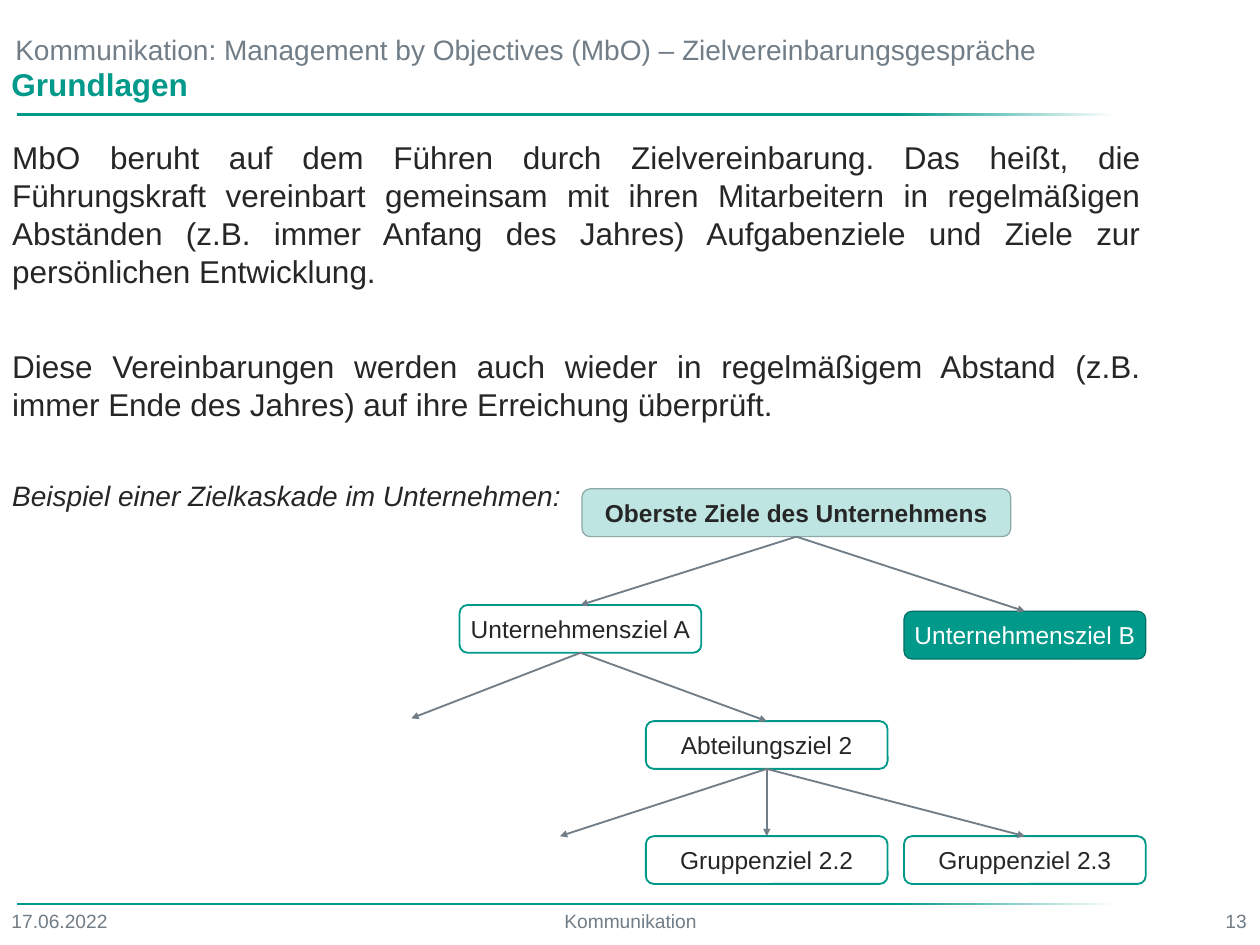
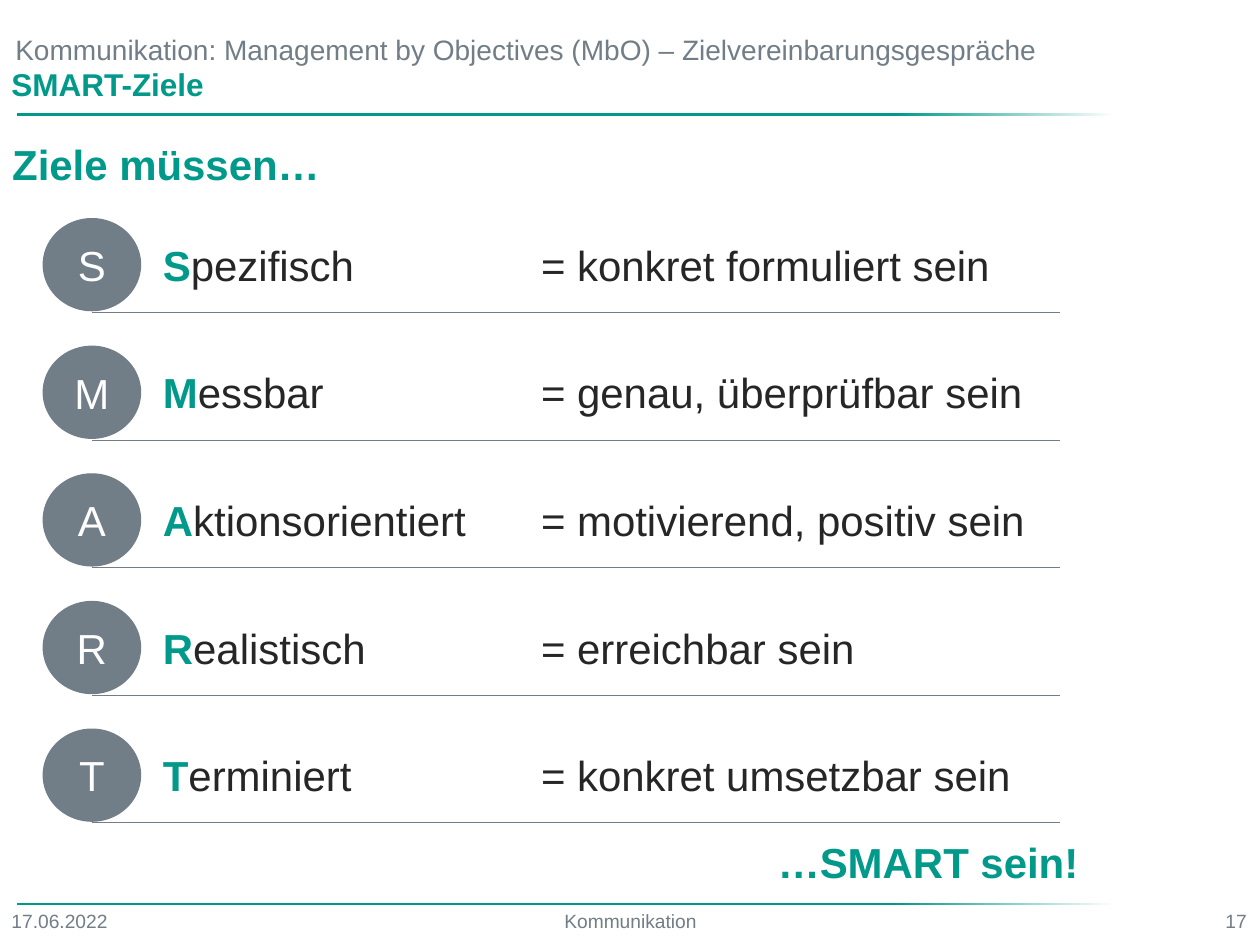
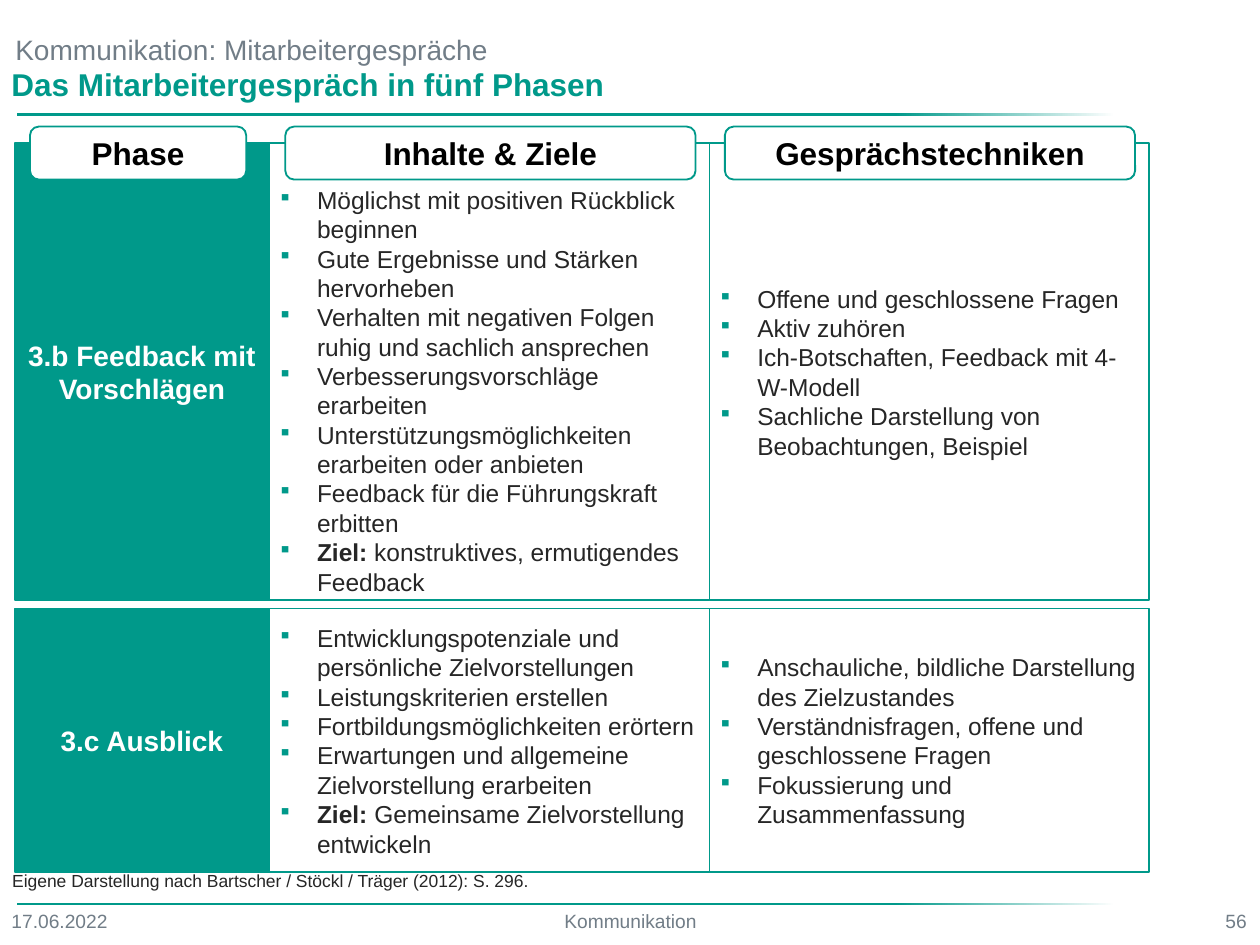
from copy import deepcopy

from lxml.etree import SubElement
from pptx import Presentation
from pptx.dml.color import RGBColor
from pptx.enum.shapes import MSO_CONNECTOR as Link, MSO_SHAPE as Preset
from pptx.enum.text import MSO_ANCHOR as Anchor, PP_ALIGN as Align
from pptx.oxml.ns import qn
from pptx.util import Cm, Pt

FONT = "Arial"
TEAL, GREY, INK, WHITE, BLACK = "00998A", "717D87", "262626", "FFFFFF", "000000"
FOOTER, SMALL, TEXT, TOPIC, HEADING, LARGE = 15.6, 14.2, 19.9, 22.8, 25.6, 34.1
INSET = (0.25, 0.13)

DATE, COURSE = "17.06.2022", "Kommunikation"
MBO = "Kommunikation: Management by Objectives (MbO) – Zielvereinbarungsgespräche"
TALKS = "Kommunikation: Mitarbeitergespräche"
BODY = (0.1, 3.84, 32.84, 21.23)

BASICS = [
    ("MbO beruht auf dem Führen durch Zielvereinbarung. Das heißt, die Führungskraft "
     "vereinbart gemeinsam mit ihren Mitarbeitern in regelmäßigen Abständen (z.B. immer "
     "Anfang des Jahres) Aufgabenziele und Ziele zur persönlichen Entwicklung.",
     HEADING, False, 47),
    ("Diese Vereinbarungen werden auch wieder in regelmäßigem Abstand (z.B. immer Ende "
     "des Jahres) auf ihre Erreichung überprüft.", HEADING, False, 45),
    ("Beispiel einer Zielkaskade im Unternehmen:", TOPIC, True, 0),
]

GOAL_STYLES = {
    "top": ("BFE5E2", "8DA9A7", 1, INK, True),
    "plain": (WHITE, TEAL, 1.5, INK, False),
    "filled": (TEAL, "007166", 1, WHITE, False),
}
GOAL_HEIGHT = 1.37
GOALS = {
    "top": ("Oberste Ziele des Unternehmens", 22.83, 14.02, 12.29, "top"),
    "a": ("Unternehmensziel A", 16.64, 17.35, 6.93, "plain"),
    "b": ("Unternehmensziel B", 29.38, 17.53, 6.93, "filled"),
    "2": ("Abteilungsziel 2", 21.98, 20.68, 6.93, "plain"),
    "2.2": ("Gruppenziel 2.2", 21.98, 23.98, 6.93, "plain"),
    "2.3": ("Gruppenziel 2.3", 29.38, 23.98, 6.93, "plain"),
}
CASCADE = [("top", "a"), ("top", "b"), ("a", "2"), ("2", "2.2"), ("2", "2.3")]
OPEN_ENDS = [("2", (16.05, 23.98)), ("a", (11.79, 20.6))]

SMART = [
    ("Spezifisch", "konkret formuliert sein"),
    ("Messbar", "genau, überprüfbar sein"),
    ("Aktionsorientiert", "motivierend, positiv sein"),
    ("Realistisch", "erreichbar sein"),
    ("Terminiert", "konkret umsetzbar sein"),
]
SMART_TOP, SMART_PITCH = 6.27, 3.66

COLUMNS = [(0.42, 7.3), (7.72, 12.62), (20.34, 12.6)]
HEADERS = [
    ("Phase", 0.86, 6.2),
    ("Inhalte & Ziele", 8.18, 11.76),
    ("Gesprächstechniken", 20.78, 11.76),
]
PHASES = [
    ("3.b Feedback mit Vorschlägen", 4.11, 13.11, Anchor.BOTTOM, [
        [("", "Möglichst mit positiven Rückblick beginnen"),
         ("", "Gute Ergebnisse und Stärken hervorheben"),
         ("", "Verhalten mit negativen Folgen ruhig und sachlich ansprechen"),
         ("", "Verbesserungsvorschläge erarbeiten"),
         ("", "Unterstützungsmöglichkeiten erarbeiten oder anbieten"),
         ("", "Feedback für die Führungskraft erbitten"),
         ("Ziel:", " konstruktives, ermutigendes Feedback")],
        [("", "Offene und geschlossene Fragen"),
         ("", "Aktiv zuhören"),
         ("", "Ich-Botschaften, Feedback mit 4-W-Modell"),
         ("", "Sachliche Darstellung von Beobachtungen, Beispiel")],
    ]),
    ("3.c Ausblick", 17.45, 7.57, Anchor.MIDDLE, [
        [("", "Entwicklungspotenziale und persönliche Zielvorstellungen"),
         ("", "Leistungskriterien erstellen"),
         ("", "Fortbildungsmöglichkeiten erörtern"),
         ("", "Erwartungen und allgemeine Zielvorstellung erarbeiten"),
         ("Ziel: ", "Gemeinsame Zielvorstellung entwickeln")],
        [("", "Anschauliche, bildliche Darstellung des Zielzustandes"),
         ("", "Verständnisfragen, offene und geschlossene Fragen"),
         ("", "Fokussierung und Zusammenfassung")],
    ]),
]
SOURCE = "Eigene Darstellung nach Bartscher / Stöckl / Träger (2012): S. 296."


def rgb(value):
    return RGBColor.from_string(value)


def lengths(values):
    return [Cm(value) for value in values]


def prepare(frame, anchor, inset=INSET):
    frame.word_wrap = True
    frame.vertical_anchor = anchor
    frame.margin_left = frame.margin_right = Cm(inset[0])
    frame.margin_top = frame.margin_bottom = Cm(inset[1])
    return frame


def add_para(frame, first, align=Align.LEFT, after=0):
    para = frame.paragraphs[0] if first else frame.add_paragraph()
    para.alignment = align
    para.space_before = Pt(0)
    para.space_after = Pt(after)
    return para


def add_span(para, text, size, color=INK, bold=False, italic=False):
    span = para.add_run()
    span.text = text
    font = span.font
    font.name, font.size, font.bold, font.italic = FONT, Pt(size), bold, italic
    font.color.rgb = rgb(color)


def add_box(page, at, anchor=Anchor.TOP, inset=INSET):
    return prepare(page.shapes.add_textbox(*lengths(at)).text_frame, anchor, inset)


def add_label(page, at, text, size, color=INK, bold=False, align=Align.LEFT,
              anchor=Anchor.TOP, inset=INSET):
    para = add_para(add_box(page, at, anchor, inset), True, align)
    add_span(para, text, size, color, bold)


def add_panel(page, preset, at, fill, line, width, anchor=Anchor.MIDDLE, inset=INSET):
    shape = page.shapes.add_shape(preset, *lengths(at))
    shape.shadow.inherit = False
    if fill:
        shape.fill.solid()
        shape.fill.fore_color.rgb = rgb(fill)
    else:
        shape.fill.background()
    shape.line.color.rgb = rgb(line)
    shape.line.width = Pt(width)
    prepare(shape.text_frame, anchor, inset)
    return shape


def add_caption(shape, text, size, color, bold=False):
    add_span(add_para(shape.text_frame, True, Align.CENTER), text, size, color, bold)


def add_line(page, start, end, width, arrow=False):
    line = page.shapes.add_connector(Link.STRAIGHT, *lengths(start + end))
    line.line.color.rgb = rgb(GREY)
    line.line.width = Pt(width)
    properties = line._element.spPr
    if arrow:
        SubElement(properties.find(qn("a:ln")), qn("a:tailEnd"), type="triangle")
    SubElement(properties, qn("a:effectLst"))
    return line


def add_rule(page, top, height):
    rule = page.shapes.add_shape(Preset.RECTANGLE, *lengths((0.49, top, 31.47, height)))
    rule.shadow.inherit = False
    rule.line.fill.background()
    rule.fill.gradient()
    rule.fill.gradient_angle = 0
    stop_list = rule._element.spPr.find(".//" + qn("a:gsLst"))
    stop_list.insert(0, deepcopy(stop_list[0]))
    stops = [(0, TEAL), (0.8, TEAL), (1, WHITE)]
    for stop, (position, color) in zip(rule.fill.gradient_stops, stops):
        stop.position = position
        stop.color.rgb = rgb(color)


def add_page(deck, topic, heading, number):
    page = deck.slides.add_slide(deck.slide_layouts[6])
    add_rule(page, 3.25, 0.08)
    add_rule(page, 25.91, 0.05)
    footers = [(DATE, 0.08, 6.02, Align.LEFT), (COURSE, 7.09, 21.97, Align.CENTER),
               (number, 29.97, 6.02, Align.RIGHT)]
    for text, left, width, align in footers:
        add_label(page, (left, 25.96, width, 1.12), text, FOOTER, GREY, align=align)
    add_label(page, (0.08, 0.69, 31.34, 1.4), topic, TOPIC, GREY,
              anchor=Anchor.BOTTOM, inset=(0.36, 0.18))
    add_label(page, (0.08, 1.73, 31.42, 1.42), heading, HEADING, TEAL, True)
    return page


def build_basics(deck):
    page = add_page(deck, MBO, "Grundlagen", "13")
    frame = add_box(page, BODY)
    for index, (text, size, italic, after) in enumerate(BASICS):
        para = add_para(frame, index == 0, Align.JUSTIFY, after)
        add_span(para, text, size, italic=italic)

    shapes = {}
    for key, (text, center, top, width, style) in GOALS.items():
        fill, line, weight, color, bold = GOAL_STYLES[style]
        at = (center - width / 2, top, width, GOAL_HEIGHT)
        shapes[key] = add_panel(page, Preset.ROUNDED_RECTANGLE, at, fill, line, weight,
                                inset=(0.15, 0.15))
        add_caption(shapes[key], text, TEXT, color, bold)

    targets = [(parent, GOALS[child][1:3], child) for parent, child in CASCADE]
    targets += [(parent, end, None) for parent, end in OPEN_ENDS]
    for parent, end, child in targets:
        center, top = GOALS[parent][1:3]
        arrow = add_line(page, (center, top + GOAL_HEIGHT), end, 1.5, arrow=True)
        arrow.begin_connect(shapes[parent], 2)
        if child:
            arrow.end_connect(shapes[child], 0)


def build_smart(deck):
    page = add_page(deck, MBO, "SMART-Ziele", "17")
    add_label(page, BODY, "Ziele müssen…", LARGE, TEAL, True)
    for index, (word, meaning) in enumerate(SMART):
        top = SMART_TOP + index * SMART_PITCH
        circle = add_panel(page, Preset.OVAL, (1.24, top, 2.79, 2.64), GREY, GREY, 1)
        add_caption(circle, word[0], LARGE, WHITE)
        add_line(page, (2.64, top + 2.69), (30.38, top + 2.69), 0.75)
        frame = add_box(page, (4.42, top + 0.46, 25.96, 1.73))
        para = add_para(frame, True)
        tabs = SubElement(para._p.get_or_add_pPr(), qn("a:tabLst"))
        SubElement(tabs, qn("a:tab"), pos=str(Cm(10.84)), algn="l")
        add_span(para, word[0], LARGE, TEAL, True)
        add_span(para, f"{word[1:]}\t= {meaning}", LARGE)
    add_label(page, (22.05, 23.85, 10.77, 1.73), "…SMART sein!", LARGE, TEAL, True)


def add_bullets(frame, items):
    for index, (lead, text) in enumerate(items):
        para = add_para(frame, index == 0)
        properties = para._p.get_or_add_pPr()
        properties.set("marL", str(Cm(1.12)))
        properties.set("indent", str(-Cm(1.12)))
        SubElement(SubElement(properties, qn("a:buClr")), qn("a:srgbClr"), val=TEAL)
        SubElement(properties, qn("a:buSzPct"), val="80000")
        SubElement(properties, qn("a:buChar"), char="▪")
        if lead:
            add_span(para, lead, TEXT, bold=True)
        add_span(para, text, TEXT)


def build_phases(deck):
    page = add_page(deck, TALKS, "Das Mitarbeitergespräch in fünf Phasen", "56")
    for name, top, height, contents_anchor, lists in PHASES:
        cells = [(left, top, width, height) for left, width in COLUMNS]
        phase = add_panel(page, Preset.RECTANGLE, cells[0], TEAL, TEAL, 1.5)
        add_caption(phase, name, TOPIC, WHITE, True)
        for at, items, anchor in zip(cells[1:], lists, (contents_anchor, Anchor.MIDDLE)):
            cell = add_panel(page, Preset.RECTANGLE, at, None, TEAL, 1.5, anchor)
            add_bullets(cell.text_frame, items)
    for text, left, width in HEADERS:
        header = add_panel(page, Preset.ROUNDED_RECTANGLE, (left, 3.63, width, 1.52),
                           WHITE, TEAL, 1.5)
        add_caption(header, text, HEADING, BLACK, True)
    add_label(page, (0.1, 24.82, 18.67, 0.86), SOURCE, SMALL)


def main():
    deck = Presentation()
    deck.slide_width, deck.slide_height = Cm(36.12), Cm(27.1)
    for build in (build_basics, build_smart, build_phases):
        build(deck)
    deck.save("out.pptx")


if __name__ == "__main__":
    main()
